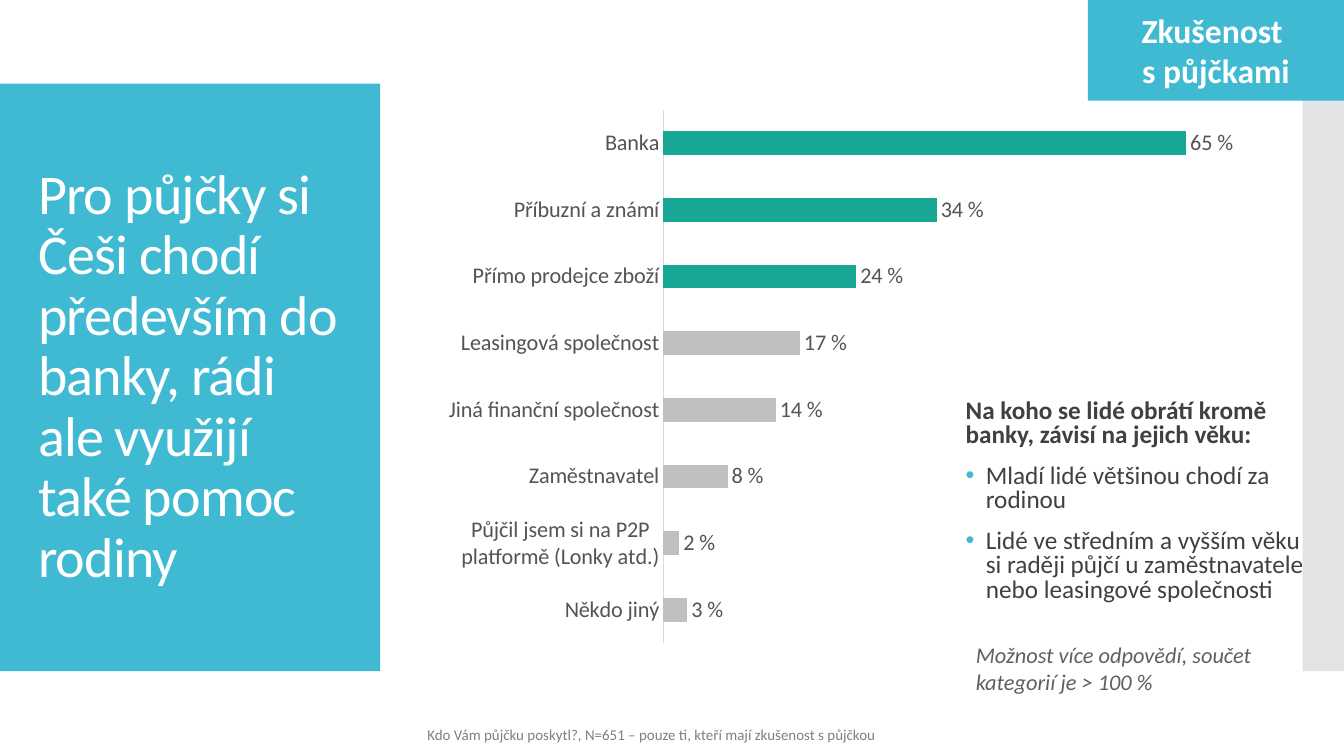
import pptx
import pptx.util
import pptx.chart.data
import pptx.dml.color
import pptx.enum.chart
import pptx.enum.shapes
import pptx.enum.text
import pptx.oxml
import pptx.oxml.ns
from dataclasses import dataclass
from lxml import etree

Inches = pptx.util.Inches
Pt = pptx.util.Pt
qn = pptx.oxml.ns.qn


@dataclass(frozen=True)
class Theme:
    font: str = "Calibri"
    accent: str = "40BAD2"
    strip: str = "C8C8C8"
    white: str = "FFFFFF"
    highlight: str = "18A794"
    bar: str = "BFBFBF"
    axis: str = "D9D9D9"
    label: str = "545454"
    body: str = "404040"
    note: str = "606060"
    source: str = "808080"
    title_size: float = 40
    tag_size: float = 24
    body_size: float = 18
    small_size: float = 16
    source_size: float = 10.7


THEME = Theme()
ANSWERS = [
    ("Banka", 0.65),
    ("Příbuzní a známí", 0.34),
    ("Přímo prodejce zboží", 0.24),
    ("Leasingová společnost", 0.17),
    ("Jiná finanční společnost", 0.14),
    ("Zaměstnavatel", 0.08),
    ("Půjčil jsem si na P2P platformě (Lonky atd.)", 0.02),
    ("Někdo jiný", 0.03),
]
HIGHLIGHTED = 3


def rgb(color):
    return pptx.dml.color.RGBColor.from_string(color)


def set_font(font, size, color, bold=False, italic=False):
    font.name, font.size, font.bold, font.italic = THEME.font, Pt(size), bold, italic
    font.color.rgb = rgb(color)


def add_panel(page, box, color):
    panel = page.shapes.add_shape(
        pptx.enum.shapes.MSO_SHAPE.RECTANGLE, *map(Inches, box))
    panel.shadow.inherit = False
    panel.fill.solid()
    panel.fill.fore_color.rgb = rgb(color)
    panel.line.fill.background()
    return panel


def add_text(page, box, text, size, color, middle=False, **style):
    """Add a wrapping text box, one paragraph per line of text."""
    frame = page.shapes.add_textbox(*map(Inches, box)).text_frame
    frame.word_wrap = True
    if middle:
        frame.vertical_anchor = pptx.enum.text.MSO_ANCHOR.MIDDLE
    frame.text = text
    for paragraph in frame.paragraphs:
        for span in paragraph.runs:
            set_font(span.font, size, color, **style)
    return frame


def add_title_panel(page, left, top, width, height):
    add_panel(page, (left, top, width, height), THEME.accent)
    frame = add_text(
        page, (left + 0.28, top + 0.4, width - 0.48, height - 0.8),
        "Pro půjčky si Češi chodí především do banky, rádi ale využijí \vtaké pomoc rodiny",
        THEME.title_size, THEME.white, middle=True)
    paragraph = frame.paragraphs[0]
    paragraph.line_spacing = 0.9
    for span in paragraph.runs:
        span.font._element.set("spc", "-60")


def add_side_strip(page, *box):
    strip = add_panel(page, box, THEME.strip)
    color = strip.fill._xPr.find(".//" + qn("a:srgbClr"))
    etree.SubElement(color, qn("a:alpha"), val="50000")


def add_topic_tag(page, *box):
    frame = add_panel(page, box, THEME.accent).text_frame
    frame.vertical_anchor = pptx.enum.text.MSO_ANCHOR.MIDDLE
    frame.text = "Zkušenost \vs půjčkami"
    frame.paragraphs[0].alignment = pptx.enum.text.PP_ALIGN.CENTER
    for span in frame.paragraphs[0].runs:
        set_font(span.font, THEME.tag_size, THEME.white, bold=True)


def set_plot_layout(chart, **fractions):
    """Fix the inner plot area as fractions of the chart."""
    area = chart._chartSpace.find(".//" + qn("c:plotArea"))
    for existing in area.findall(qn("c:layout")):
        area.remove(existing)
    layout = etree.Element(qn("c:layout"))
    manual = etree.SubElement(layout, qn("c:manualLayout"))
    settings = {"layoutTarget": "inner", "xMode": "edge", "yMode": "edge", **fractions}
    for name, value in settings.items():
        etree.SubElement(manual, qn("c:" + name), val=str(value))
    area.insert(0, layout)


def add_lender_chart(page, *box):
    data = pptx.chart.data.CategoryChartData(number_format="0%")
    data.categories = [name for name, share in ANSWERS]
    data.add_series("Series 1", [share for name, share in ANSWERS])
    chart = page.shapes.add_chart(
        pptx.enum.chart.XL_CHART_TYPE.BAR_CLUSTERED, *map(Inches, box), data).chart
    chart.has_legend = False
    chart.has_title = False
    set_font(chart.font, THEME.small_size, THEME.label)
    set_plot_layout(chart, x=0.296, y=0.027, w=0.704, h=0.945)

    # Axes
    names = chart.category_axis
    names.reverse_order = True
    names.major_tick_mark = pptx.enum.chart.XL_TICK_MARK.NONE
    names.format.line.color.rgb = rgb(THEME.axis)
    names.format.line.width = Pt(0.75)
    shares = chart.value_axis
    shares.minimum_scale, shares.maximum_scale = 0, 0.7
    shares.has_major_gridlines = False
    shares.visible = False

    # Bars and their labels
    plot = chart.plots[0]
    plot.gap_width = 182
    plot.vary_by_categories = False
    series = plot.series[0]
    series.format.fill.solid()
    series.format.fill.fore_color.rgb = rgb(THEME.bar)
    for index in range(HIGHLIGHTED):
        fill = series.points[index].format.fill
        fill.solid()
        fill.fore_color.rgb = rgb(THEME.highlight)
    labels = series.data_labels
    labels.show_value = True
    labels.number_format = "0 %"
    labels.number_format_is_linked = False
    labels.position = pptx.enum.chart.XL_LABEL_POSITION.OUTSIDE_END
    set_font(labels.font, THEME.small_size, THEME.label)


def add_bullet(paragraph):
    properties = paragraph._p.get_or_add_pPr()
    properties.set("marL", str(Inches(0.2)))
    properties.set("indent", str(-Inches(0.2)))
    color = etree.SubElement(properties, qn("a:buClr"))
    etree.SubElement(color, qn("a:srgbClr"), val=THEME.accent)
    etree.SubElement(properties, qn("a:buFont"), typeface="Arial")
    etree.SubElement(properties, qn("a:buChar"), char="•")


def add_age_findings(page, *box):
    lines = [
        "Na koho se lidé obrátí kromě banky, závisí na jejich věku:",
        "Mladí lidé většinou chodí za rodinou",
        "Lidé ve středním a vyšším věku si raději půjčí u zaměstnavatele nebo leasingové společnosti",
    ]
    frame = add_text(page, box, "\n".join(lines), THEME.body_size, THEME.body, middle=True)
    heading, *findings = frame.paragraphs
    heading.runs[0].font.bold = True
    heading.line_spacing = 0.8
    for paragraph in findings:
        add_bullet(paragraph)
        paragraph.line_spacing = 0.8
        paragraph.space_before = Pt(12)


def add_notes(page, note_box, source_box):
    note = add_text(page, note_box, "Možnost více odpovědí, součet kategorií je > 100 %",
                    THEME.small_size, THEME.note, italic=True)
    source = add_text(
        page, source_box,
        "Kdo Vám půjčku poskytl?, N=651 – pouze ti, kteří mají zkušenost s půjčkou",
        THEME.source_size, THEME.source)
    for frame in (note, source):
        frame.auto_size = pptx.enum.text.MSO_AUTO_SIZE.SHAPE_TO_FIT_TEXT


def main():
    deck = pptx.Presentation()
    deck.slide_width, deck.slide_height = Inches(13.33), Inches(7.5)
    page = deck.slides.add_slide(deck.slide_layouts[6])
    add_title_panel(page, 0, 0.83, 3.77, 5.83)
    add_side_strip(page, 12.92, 0.83, 0.41, 5.83)
    add_notes(page, (9.58, 6.31, 3.36, 0.64), (4.14, 7.15, 9.19, 0.28))
    add_topic_tag(page, 10.79, 0, 2.54, 1)
    add_lender_chart(page, 4.23, 0.94, 8, 5.6)
    add_age_findings(page, 9.48, 3.75, 3.57, 2.45)
    deck.save("out.pptx")


if __name__ == "__main__":
    main()
